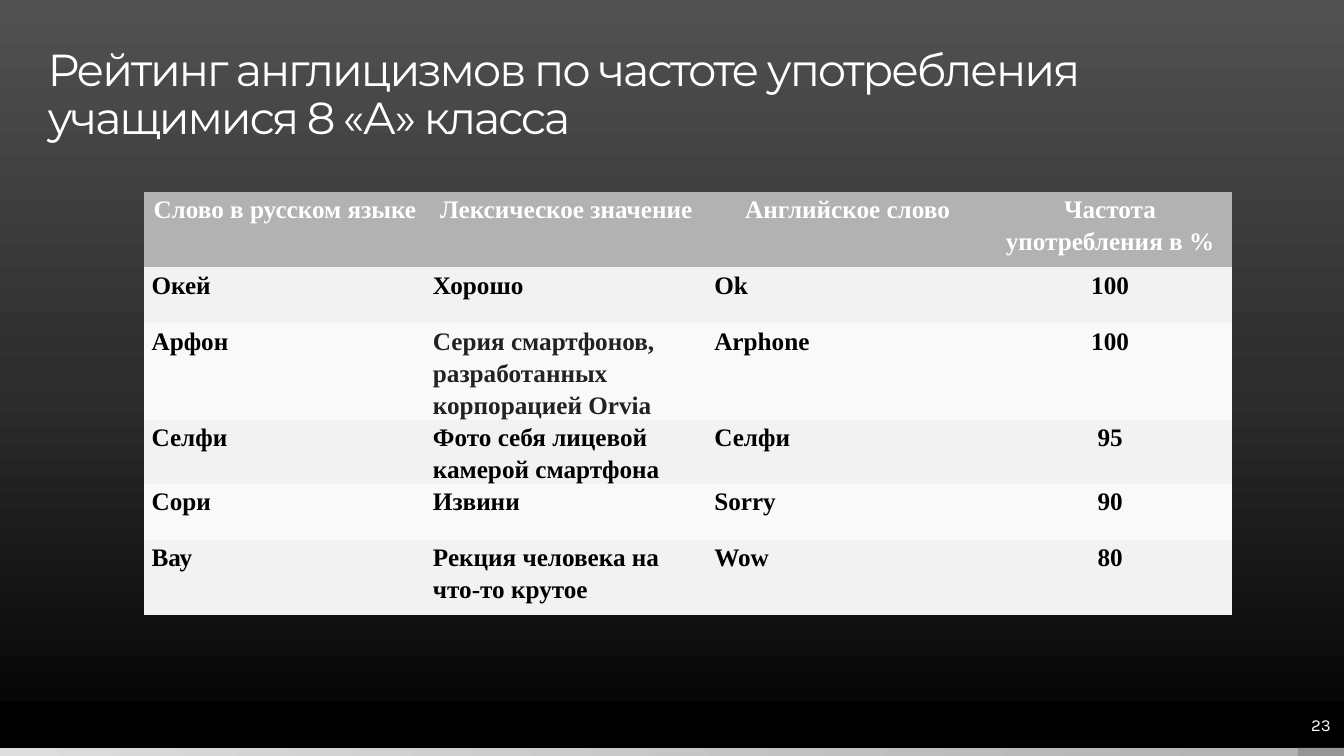
from copy import deepcopy
from dataclasses import dataclass

from pptx import Presentation
from pptx.dml.color import RGBColor
from pptx.enum.shapes import MSO_SHAPE
from pptx.enum.text import MSO_ANCHOR, MSO_AUTO_SIZE, PP_ALIGN
from pptx.util import Pt

RECT = MSO_SHAPE.RECTANGLE
LEFT, CENTER = PP_ALIGN.LEFT, PP_ALIGN.CENTER
TOP, MIDDLE = MSO_ANCHOR.TOP, MSO_ANCHOR.MIDDLE
NO_STYLE = "{2D5ABB26-0587-4C30-8999-92F81FD0307C}"


@dataclass(frozen=True)
class Theme:
    backdrop: tuple = ("515151", "2E2E2E", "000000")
    strip: tuple = ("DDDDDD", "B2B2B2")
    corner: str = "969696"
    header: str = "B2B2B2"
    bands: tuple = ("F2F2F2", "F9F9F9")
    dark: str = "000000"
    soft: str = "222222"
    light: str = "FFFFFF"
    title_font: str = "Montserrat"
    table_font: str = "Times New Roman"
    number_font: str = "Karla"
    title_size: int = 32
    table_size: int = 18
    number_size: int = 12


THEME = Theme()

WIDTH, HEIGHT = 960, 540
FOOTER_TOP, FOOTER_HEIGHT, STRIP_HEIGHT = 501, 33, 6
COLUMNS = (201, 201, 201, 174)
ROW_HEIGHTS = (54, 40, 40, 40, 40, 54)
RATING = (
    ("Слово в русском языке", "Лексическое значение", "Английское слово",
     "Частота употребления в %"),
    ("Окей", "Хорошо", "Ok", "100"),
    ("Арфон", "Серия смартфонов, разработанных корпорацией Orvia", "Arphone", "100"),
    ("Селфи", "Фото себя лицевой камерой смартфона", "Селфи", "95"),
    ("Сори", "Извини", "Sorry", "90"),
    ("Вау", "Рекция человека на что-то крутое", "Wow", "80"),
)
SOFT_CELL = (2, 1)


def write(tf, text, font, size, color, bold=False, align=LEFT, line=1.0, spacing=0):
    p = tf.paragraphs[0]
    p.alignment = align
    p.line_spacing = line
    r = p.add_run()
    r.text = text
    r.font.name = font
    r.font.size = Pt(size)
    r.font.bold = bold
    r.font.color.rgb = RGBColor.from_string(color)
    if spacing:
        r.font._element.set("spc", str(round(spacing * 100)))


def paint_gradient(fill, colors, angle):
    fill.gradient()
    fill.gradient_angle = angle
    stops = fill.gradient_stops
    stop_list = stops[0]._gs.getparent()
    for _ in range(len(colors) - len(stops)):
        stop_list.append(deepcopy(stop_list[-1]))
    for i, (stop, color) in enumerate(zip(fill.gradient_stops, colors)):
        stop.position = i / (len(colors) - 1)
        stop.color.rgb = RGBColor.from_string(color)


def add_block(slide, box, color):
    sp = slide.shapes.add_shape(RECT, *map(Pt, box))
    sp.shadow.inherit = False
    sp.line.fill.background()
    if isinstance(color, tuple):
        paint_gradient(sp.fill, color, 0)
    else:
        sp.fill.solid()
        sp.fill.fore_color.rgb = RGBColor.from_string(color)
    return sp


def clear_margins(tf):
    tf.margin_left = tf.margin_top = tf.margin_right = tf.margin_bottom = 0


def add_footer(slide, box, number):
    x, y, w, h = box
    split = w - h
    strip_y = y + h
    # Black band and light strip below it
    add_block(slide, (x, y, w, h), THEME.dark)
    add_block(slide, (x, strip_y, split, STRIP_HEIGHT), THEME.strip)
    add_block(slide, (x + split, strip_y, h, STRIP_HEIGHT), THEME.corner)
    # Slide number
    tf = add_block(slide, (x + split, y, h, h), THEME.dark).text_frame
    clear_margins(tf)
    tf.vertical_anchor = MIDDLE
    write(tf, number, THEME.number_font, THEME.number_size, THEME.light, align=CENTER)


def add_title(slide, box, text):
    sp = slide.shapes.title
    sp.left, sp.top, sp.width, sp.height = map(Pt, box)
    tf = sp.text_frame
    clear_margins(tf)
    tf.word_wrap = True
    tf.auto_size = MSO_AUTO_SIZE.NONE
    tf.vertical_anchor = TOP
    write(tf, text, THEME.title_font, THEME.title_size, THEME.light,
          line=0.9, spacing=-1.5)


def add_rating(slide, x, y):
    box = (x, y, sum(COLUMNS), sum(ROW_HEIGHTS))
    frame = slide.shapes.add_table(len(RATING), len(COLUMNS), *map(Pt, box))
    table = frame.table
    table._tbl.tblPr.xpath("a:tableStyleId")[0].text = NO_STYLE
    for column, width in zip(table.columns, COLUMNS):
        column.width = Pt(width)
    for row, height in zip(table.rows, ROW_HEIGHTS):
        row.height = Pt(height)
    for i, texts in enumerate(RATING):
        heading = i == 0
        for j, text in enumerate(texts):
            cell = table.cell(i, j)
            cell.margin_left = cell.margin_right = Pt(5.3)
            cell.margin_top = cell.margin_bottom = 0
            cell.vertical_anchor = TOP
            cell.fill.solid()
            fill = THEME.header if heading else THEME.bands[(i - 1) % 2]
            cell.fill.fore_color.rgb = RGBColor.from_string(fill)
            color = THEME.light if heading else THEME.dark
            if (i, j) == SOFT_CELL:
                color = THEME.soft
            centered = heading or j == len(COLUMNS) - 1
            write(cell.text_frame, text, THEME.table_font, THEME.table_size, color,
                  bold=True, align=CENTER if centered else LEFT, line=1.15)


def main():
    prs = Presentation()
    prs.slide_width, prs.slide_height = Pt(WIDTH), Pt(HEIGHT)
    slide = prs.slides.add_slide(prs.slide_layouts[5])
    paint_gradient(slide.background.fill, THEME.backdrop, 270)
    add_footer(slide, (0, FOOTER_TOP, WIDTH, FOOTER_HEIGHT), "23")
    add_title(slide, (34, 34, 893, 34),
              "Рейтинг англицизмов по частоте употребления учащимися 8 «А» класса")
    add_rating(slide, 103, 137)
    prs.save("out.pptx")


if __name__ == "__main__":
    main()
